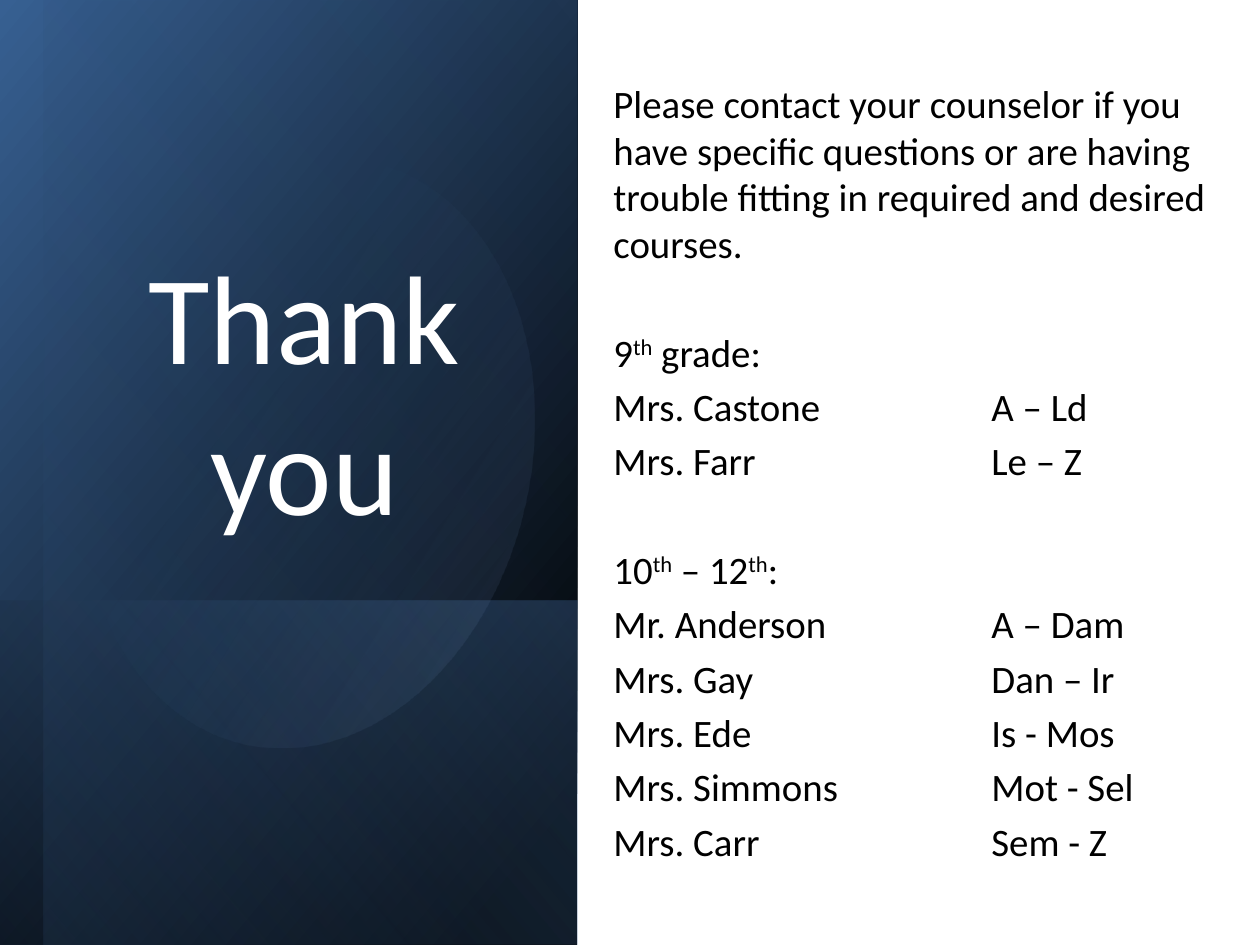
from lxml.etree import SubElement
from pptx import Presentation
from pptx.dml.color import RGBColor
from pptx.enum.shapes import MSO_SHAPE as Preset
from pptx.enum.text import MSO_ANCHOR as Anchor, PP_ALIGN as Align
from pptx.oxml import parse_xml
from pptx.oxml.ns import nsdecls, qn
from pptx.util import Inches, Pt

WIDTH, HEIGHT = 10, 7.5
FONT, BODY_SIZE = "Calibri", 22.2
LINE_GAP, GROUP_GAP = 4.4, 35.5
INTRO = ("Please contact your counselor if you have specific questions or are "
         "having trouble fitting in required and desired courses.")
GROUPS = [
    (["9", "th", " grade:"],
     [("Mrs. Castone", "A – Ld"), ("Mrs. Farr", "Le – Z")]),
    (["10", "th", " – 12", "th", ":"],
     [("Mr. Anderson", "A – Dam"), ("Mrs. Gay", "Dan – Ir"), ("Mrs. Ede", "Is - Mos"),
      ("Mrs. Simmons", "Mot - Sel"), ("Mrs. Carr", "Sem - Z")]),
]


def color(value):
    """Turn a hex string into a colour."""
    return RGBColor.from_string(value)


def add_gradient_shape(slide, preset, frame, rotation, stops, angle):
    """Add a rotated shape whose gradient stops are (percent, colour, opacity)."""
    shape = slide.shapes.add_shape(preset, *map(Inches, frame))
    shape.rotation = rotation
    shape.shadow.inherit = False
    shape.line.fill.background()
    marks = "".join(
        f'<a:gs pos="{place * 1000}"><a:srgbClr val="{tint}">'
        f'<a:alpha val="{opacity * 1000}"/></a:srgbClr></a:gs>'
        for place, tint, opacity in stops)
    gradient = parse_xml(
        f'<a:gradFill {nsdecls("a")} rotWithShape="1"><a:gsLst>{marks}</a:gsLst>'
        f'<a:lin ang="{angle * 60000}" scaled="0"/></a:gradFill>')
    shape.element.spPr.find(qn("a:prstGeom")).addnext(gradient)
    return shape


def add_layer(slide, box, stops, angle):
    """Cover an upright box with a mirrored rectangle turned a quarter."""
    left, top, width, height = box
    shift = (width - height) / 2
    frame = left + shift, top - shift, height, width
    layer = add_gradient_shape(slide, Preset.RECTANGLE, frame, 90, stops, angle)
    layer.element.spPr.find(qn("a:xfrm")).set("flipH", "1")


def add_text_frame(slide, box, anchor):
    """Add a wrapping text box and return its text frame."""
    frame = slide.shapes.add_textbox(*map(Inches, box)).text_frame
    frame.word_wrap = True
    frame.vertical_anchor = anchor
    return frame


def format_spans(para, size, tint):
    """Give every run of a paragraph the slide font, raising ordinal endings."""
    for span in para.runs:
        span.font.name = FONT
        span.font.size = Pt(size)
        span.font.color.rgb = color(tint)
        if span.text == "th":
            span.font._element.set("baseline", "30000")


def add_title_panel(slide, box):
    """Build the layered blue panel with its title."""
    left, top, width, height = box
    base = [(8, "000000", 100), (100, "376092", 100)]
    lower = [(2, "4F81BD", 29), (100, "000000", 30)]
    side = [(0, "000000", 0), (99, "4F81BD", 11)]
    glow = [(39, "4F81BD", 0), (100, "95B3D7", 15)]
    low, inset = 0.635 * height, 0.076 * width
    add_layer(slide, box, base, 50)
    add_layer(slide, (left, top + low, width, height - low), lower, 130)
    add_layer(slide, (left + inset, top, width - inset, height), side, 130)
    oval = left + 0.08, top + 1.82, 4.72, 3.54
    add_gradient_shape(slide, Preset.OVAL, oval, 101.6, glow, 290)
    frame = add_text_frame(slide, (left + 0.68, top + 0.64, 3.47, 3.7), Anchor.BOTTOM)
    para = frame.paragraphs[0]
    para.text = "Thank you"
    para.alignment = Align.CENTER
    format_spans(para, 72, "FFFFFF")


def add_line(frame, pieces, gap):
    """Append a body paragraph made of the given runs."""
    para = frame.add_paragraph()
    for piece in pieces:
        para.add_run().text = piece
    para.space_before = Pt(gap)
    format_spans(para, BODY_SIZE, "000000")
    return para


def add_counselors(slide, box):
    """Write the invitation and the counselors of each grade group."""
    frame = add_text_frame(slide, box, Anchor.MIDDLE)
    intro = frame.paragraphs[0]
    intro.text = INTRO
    intro.space_before = Pt(LINE_GAP)
    format_spans(intro, BODY_SIZE, "000000")
    for heading, counselors in GROUPS:
        add_line(frame, heading, GROUP_GAP)
        for name, letters in counselors:
            para = add_line(frame, [f"{name}\t{letters}"], LINE_GAP)
            tabs = SubElement(para._p.get_or_add_pPr(), qn("a:tabLst"))
            SubElement(tabs, qn("a:tab"), pos=str(Inches(3)), algn="l")


def main():
    """Build and save the closing slide."""
    deck = Presentation()
    deck.slide_width, deck.slide_height = Inches(WIDTH), Inches(HEIGHT)
    slide = deck.slides.add_slide(deck.slide_layouts[6])
    slide.background.fill.solid()
    slide.background.fill.fore_color.rgb = color("FFFFFF")
    add_title_panel(slide, (0, 0, 4.58, HEIGHT))
    add_counselors(slide, (4.77, 0.71, 4.98, 6.07))
    deck.save("out.pptx")


if __name__ == "__main__":
    main()
